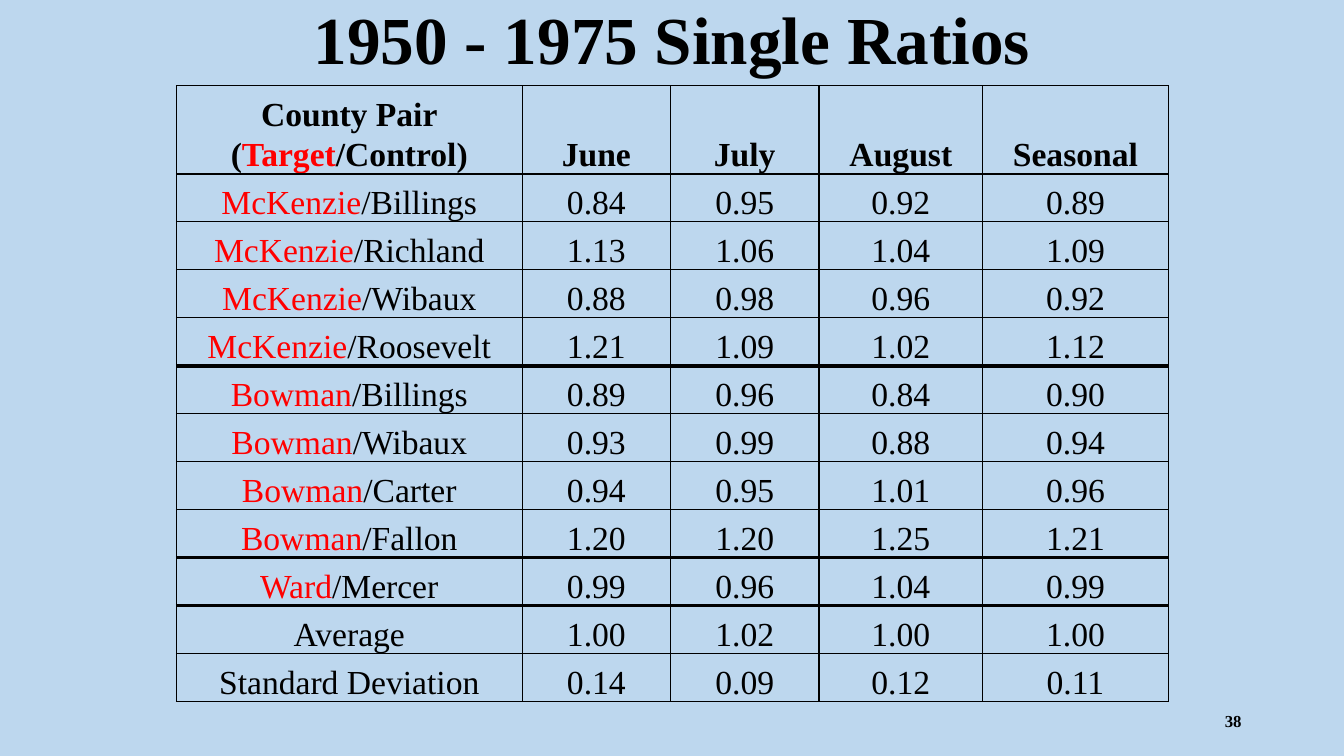
"""Build the slide with the table of single ratios for 1950 - 1975."""
from lxml.etree import SubElement
from pptx import Presentation
from pptx.dml.color import RGBColor
from pptx.enum.text import MSO_ANCHOR, PP_ALIGN
from pptx.oxml.ns import qn
from pptx.util import Pt

TITLE = "1950 - 1975 Single Ratios"
PAGE = "38"
HEADER = ("County Pair\n(Target/Control)", "June", "July", "August", "Seasonal")
ROWS = [
    ("McKenzie/Billings", "0.84", "0.95", "0.92", "0.89"),
    ("McKenzie/Richland", "1.13", "1.06", "1.04", "1.09"),
    ("McKenzie/Wibaux", "0.88", "0.98", "0.96", "0.92"),
    ("McKenzie/Roosevelt", "1.21", "1.09", "1.02", "1.12"),
    ("Bowman/Billings", "0.89", "0.96", "0.84", "0.90"),
    ("Bowman/Wibaux", "0.93", "0.99", "0.88", "0.94"),
    ("Bowman/Carter", "0.94", "0.95", "1.01", "0.96"),
    ("Bowman/Fallon", "1.20", "1.20", "1.25", "1.21"),
    ("Ward/Mercer", "0.99", "0.96", "1.04", "0.99"),
    ("Average", "1.00", "1.02", "1.00", "1.00"),
    ("Standard Deviation", "0.14", "0.09", "0.12", "0.11"),
]
GROUP_ENDS = (4, 8, 9)
SUMMARY_START = 10
COL_WIDTHS = (247, 106, 106, 117, 132.5)
HEADER_HEIGHT, ROW_HEIGHT = 58.5, 34.25

FONT = "Times New Roman"
BACKGROUND = RGBColor(0xBD, 0xD7, 0xEE)
BLACK = RGBColor(0x00, 0x00, 0x00)
RED = RGBColor(0xFF, 0x00, 0x00)


def format_paragraph(p, size, bold, align, spacing=1.0):
    p.alignment = align
    p.line_spacing = spacing
    p.font.name, p.font.size, p.font.bold = FONT, Pt(size), bold
    p.font.color.rgb = BLACK


def add_runs(p, line):
    """Write a line, with the target before the slash in red."""
    target, slash, control = line.partition("/")
    if not slash:
        parts = [(line, BLACK)]
    else:
        name = target.lstrip("(")
        bracket = target[:len(target) - len(name)]
        parts = [(bracket, BLACK), (name, RED), (slash + control, BLACK)]
    for text, color in parts:
        if text:
            r = p.add_run()
            r.text = text
            r.font.color.rgb = color


def set_borders(cell, top, bottom):
    tc_pr = cell._tc.get_or_add_tcPr()
    for tag, width in (("a:lnL", 1), ("a:lnR", 1), ("a:lnT", top), ("a:lnB", bottom)):
        ln = SubElement(tc_pr, qn(tag), w=str(Pt(width)))
        SubElement(SubElement(ln, qn("a:solidFill")), qn("a:srgbClr"), val=str(BLACK))


def fill_cell(cell, text, row):
    set_borders(cell, 3 if row - 1 in GROUP_ENDS else 1, 3 if row in GROUP_ENDS else 1)
    cell.fill.background()
    summary = row >= SUMMARY_START
    cell.vertical_anchor = MSO_ANCHOR.BOTTOM
    cell.margin_left = cell.margin_right = Pt(0.7 if summary else 12.2)
    cell.margin_top, cell.margin_bottom = Pt(0.7 if summary else 1.4), Pt(0)
    tf = cell.text_frame
    for i, line in enumerate(text.split("\n")):
        p = tf.add_paragraph() if i else tf.paragraphs[0]
        add_runs(p, line)
        format_paragraph(p, 24, row == 0, PP_ALIGN.CENTER, 1.0 if summary else 1.07)


def add_ratio_table(s):
    height = HEADER_HEIGHT + ROW_HEIGHT * len(ROWS)
    table = s.shapes.add_table(len(ROWS) + 1, len(HEADER), Pt(126), Pt(61.2),
                               Pt(sum(COL_WIDTHS)), Pt(height)).table
    table.first_row = table.horz_banding = False
    for column, width in zip(table.columns, COL_WIDTHS):
        column.width = Pt(width)
    for i, values in enumerate([HEADER, *ROWS]):
        table.rows[i].height = Pt(ROW_HEIGHT if i else HEADER_HEIGHT)
        for j, text in enumerate(values):
            fill_cell(table.cell(i, j), text, i)


def main():
    prs = Presentation()
    prs.slide_width, prs.slide_height = Pt(960), Pt(540)
    s = prs.slides.add_slide(prs.slide_layouts[5])
    s.background.fill.solid()
    s.background.fill.fore_color.rgb = BACKGROUND

    title = s.shapes.title
    title.left, title.top, title.width, title.height = Pt(66), Pt(0), Pt(828), Pt(61.2)
    page = s.shapes.add_textbox(Pt(678), Pt(500.5), Pt(216), Pt(28.75))
    for sp, text, size, align, spacing in (
            (title, TITLE, 48, PP_ALIGN.CENTER, 0.9), (page, PAGE, 12, PP_ALIGN.RIGHT, 1.0)):
        tf = sp.text_frame
        tf.text = text
        tf.word_wrap = True
        tf.vertical_anchor = MSO_ANCHOR.MIDDLE
        format_paragraph(tf.paragraphs[0], size, True, align, spacing)
    page.text_frame.paragraphs[0].space_after = Pt(6)

    add_ratio_table(s)
    prs.save("out.pptx")


if __name__ == "__main__":
    main()
